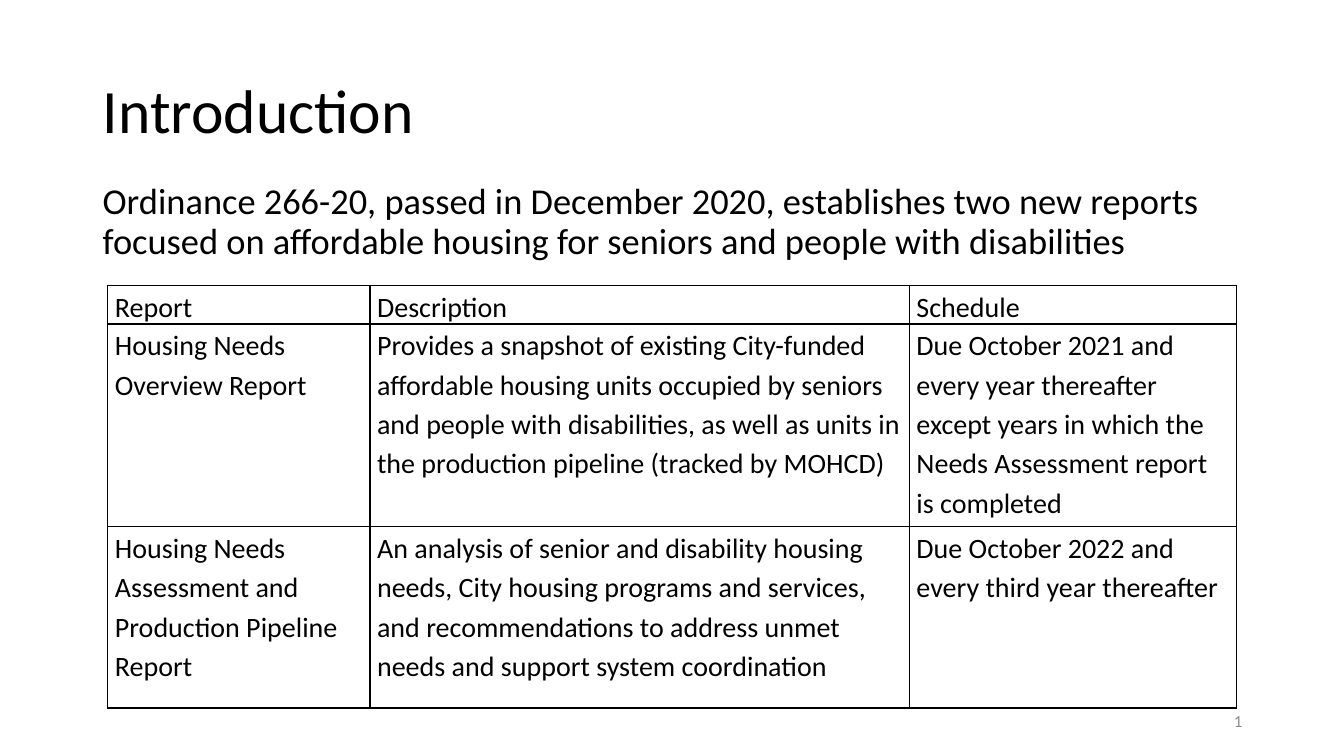
from lxml.etree import SubElement
from pptx import Presentation
from pptx.dml.color import RGBColor
from pptx.enum.text import MSO_ANCHOR as Anchor, MSO_AUTO_SIZE as AutoSize, PP_ALIGN as Align
from pptx.oxml.ns import qn
from pptx.util import Inches, Pt

BLACK, WHITE, GREY = "000000", "FFFFFF", "8C8C8C"

REPORTS = [
    ["Report", "Description", "Schedule"],
    ["Housing Needs Overview Report",
     "Provides a snapshot of existing City-funded affordable housing units occupied by seniors "
     "and people with disabilities, as well as units in the production pipeline (tracked by MOHCD)",
     "Due October 2021 and every year thereafter except years in which the Needs Assessment "
     "report is completed"],
    ["Housing Needs Assessment and Production Pipeline Report",
     "An analysis of senior and disability housing needs, City housing programs and services, "
     "and recommendations to address unmet needs and support system coordination",
     "Due October 2022 and every third year thereafter"],
]


def color(value):
    return RGBColor.from_string(value)


class Slide:
    font = "Calibri"

    def __init__(self, deck):
        self.page = deck.slides.add_slide(deck.slide_layouts[5])

    def set_text(self, frame, text, size, ink=BLACK, align=Align.LEFT, spacing=1.0, before=0):
        frame.text = text
        frame.word_wrap = True
        para = frame.paragraphs[0]
        para.alignment = align
        para.line_spacing = spacing
        para.space_before = Pt(before)
        for span in para.runs:
            span.font.name = self.font
            span.font.size = Pt(size)
            span.font.bold = False
            span.font.color.rgb = color(ink)

    def title(self, text, left, top, width, height):
        box = self.page.shapes.title
        box.left, box.top, box.width, box.height = map(Inches, (left, top, width, height))
        box.text_frame.auto_size = AutoSize.NONE
        box.text_frame.vertical_anchor = Anchor.MIDDLE
        self.set_text(box.text_frame, text, 44, spacing=0.9)

    def text(self, text, left, top, width, height, size, anchor=Anchor.TOP, **style):
        box = self.page.shapes.add_textbox(*map(Inches, (left, top, width, height)))
        box.text_frame.vertical_anchor = anchor
        self.set_text(box.text_frame, text, size, **style)

    def border(self, cell):
        properties = cell._tc.get_or_add_tcPr()
        for side in ("lnL", "lnR", "lnT", "lnB"):
            line = SubElement(properties, qn(f"a:{side}"), w=str(Pt(1)))
            fill = SubElement(line, qn("a:solidFill"))
            SubElement(fill, qn("a:srgbClr"), val=BLACK)

    def table(self, rows, left, top, widths, heights):
        frame = self.page.shapes.add_table(
            len(rows), len(widths), Inches(left), Inches(top),
            Inches(sum(widths)), Inches(sum(heights)))
        table = frame.table
        table.horz_banding = False
        for column, width in zip(table.columns, widths):
            column.width = Inches(width)
        for row, height, texts in zip(table.rows, heights, rows):
            row.height = Inches(height)
            for cell, text in zip(row.cells, texts):
                cell.margin_left = cell.margin_right = Inches(0.07)
                cell.margin_top = cell.margin_bottom = 0
                self.border(cell)
                cell.fill.solid()
                cell.fill.fore_color.rgb = color(WHITE)
                self.set_text(cell.text_frame, text, 20, spacing=1.15)


def main():
    deck = Presentation()
    deck.slide_width, deck.slide_height = Inches(13.33), Inches(7.5)
    slide = Slide(deck)
    slide.title("Introduction", 0.92, 0.4, 11.5, 1.45)
    slide.text(
        "Ordinance 266-20, passed in December 2020, establishes two new reports "
        "focused on affordable housing for seniors and people with disabilities",
        0.92, 1.77, 11.5, 1.31, 26, spacing=0.9, before=10)
    slide.text("1", 9.42, 6.95, 3, 0.4, 12, Anchor.MIDDLE, ink=GREY, align=Align.RIGHT)
    slide.table(REPORTS, 1.07, 2.83, [2.6, 5.35, 3.24], [0.36, 2.01, 1.8])
    deck.save("out.pptx")


if __name__ == "__main__":
    main()
